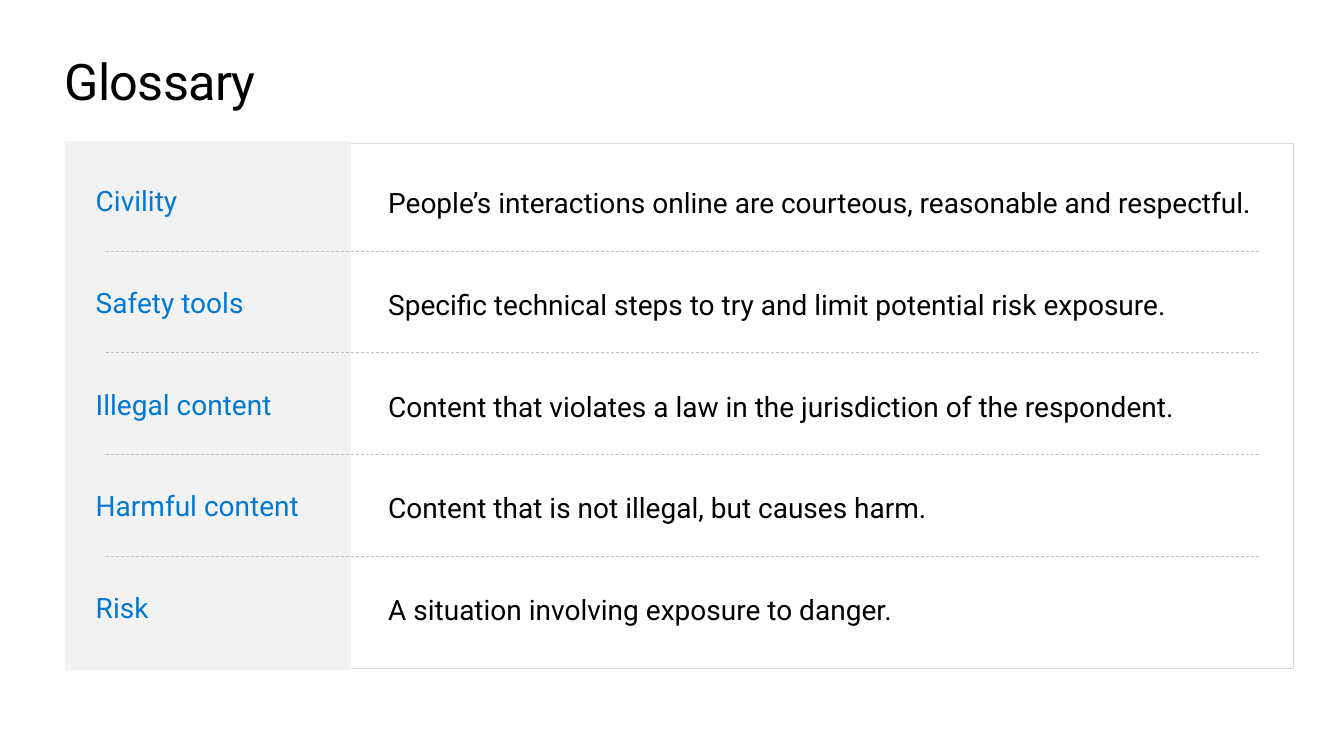
from dataclasses import dataclass

from lxml import etree
from pptx import Presentation
from pptx import util as u
from pptx.dml.color import RGBColor
from pptx.enum import dml, shapes, text
from pptx.oxml.ns import qn


@dataclass(frozen=True)
class Theme:
    font: str = "Roboto"
    title_size: float = 36
    body_size: float = 20
    ink: str = "000000"
    term: str = "0078D4"
    band: str = "F2F2F2"
    border: str = "D9D9D9"
    divider: str = "BFBFBF"


THEME = Theme()
SLIDE_SIZE = (13.33, 7.5)
LEFT, FULL_WIDTH = 0.64, 12.05
TERM_LEFT, TERM_WIDTH = 0.95, 2.34
MEANING_LEFT, MEANING_WIDTH = 3.85, 8.7
DIVIDER_LEFT, DIVIDER_RIGHT = 1.05, 12.49
FIRST_ROW, ROW_STEP, TEXT_HEIGHT = 1.82, 1.01, 0.34
MEANING_DROP, DIVIDER_DROP = 0.02, 0.67

ENTRIES = [
    ("Civility", "People’s interactions online are courteous, reasonable and respectful."),
    ("Safety tools", "Specific technical steps to try and limit potential risk exposure."),
    ("Illegal content", "Content that violates a law in the jurisdiction of the respondent."),
    ("Harmful content", "Content that is not illegal, but causes harm."),
    ("Risk", "A situation involving exposure to danger."),
]


def inches(*lengths):
    return [u.Inches(length) for length in lengths]


def color(value):
    return RGBColor.from_string(value)


def write(box, words, *, size=THEME.body_size, ink=THEME.ink, spacing=None):
    """Fill a box with one line of left-aligned text; spacing is in points."""
    frame = box.text_frame
    frame.word_wrap = True
    frame.auto_size = text.MSO_AUTO_SIZE.SHAPE_TO_FIT_TEXT
    frame.vertical_anchor = text.MSO_ANCHOR.TOP
    frame.margin_left = frame.margin_top = frame.margin_right = frame.margin_bottom = 0
    para = frame.paragraphs[0]
    para.alignment = text.PP_ALIGN.LEFT
    span = para.add_run()
    span.text = words
    span.font.name = THEME.font
    span.font.size = u.Pt(size)
    span.font.color.rgb = color(ink)
    if spacing is not None:
        span.font._element.set("spc", str(round(spacing * 100)))


def add_title(page, words):
    title = page.shapes.title
    title.left, title.top, title.width, title.height = inches(LEFT, 0.5, FULL_WIDTH, 0.61)
    write(title, words, size=THEME.title_size, spacing=-0.5)


def add_panel(page, *place, fill=None, border=None):
    panel = page.shapes.add_shape(shapes.MSO_SHAPE.RECTANGLE, *inches(*place))
    panel.shadow.inherit = False
    if fill:
        panel.fill.solid()
        panel.fill.fore_color.rgb = color(fill)
    else:
        panel.fill.background()
    if border:
        panel.line.color.rgb = color(border)
        panel.line.width = u.Pt(0.75)
    else:
        panel.line.fill.background()


def add_divider(page, top):
    divider = page.shapes.add_connector(
        shapes.MSO_CONNECTOR.STRAIGHT, *inches(DIVIDER_LEFT, top, DIVIDER_RIGHT, top))
    divider.line.color.rgb = color(THEME.divider)
    divider.line.width = u.Pt(0.5)
    divider.line.dash_style = dml.MSO_LINE.DASH
    etree.SubElement(divider._element.spPr, qn("a:effectLst"))


def add_entry(page, top, term, meaning):
    term_box = page.shapes.add_textbox(*inches(TERM_LEFT, top, TERM_WIDTH, TEXT_HEIGHT))
    write(term_box, term, ink=THEME.term)
    meaning_box = page.shapes.add_textbox(
        *inches(MEANING_LEFT, top + MEANING_DROP, MEANING_WIDTH, TEXT_HEIGHT))
    write(meaning_box, meaning)


def main():
    deck = Presentation()
    deck.slide_width, deck.slide_height = inches(*SLIDE_SIZE)
    page = deck.slides.add_slide(deck.slide_layouts.get_by_name("Title Only"))
    add_title(page, "Glossary")
    add_panel(page, 0.78, 1.42, FULL_WIDTH, 5.21, border=THEME.border)
    add_panel(page, LEFT, 1.4, 2.84, 5.25, fill=THEME.band)
    for row, (term, meaning) in enumerate(ENTRIES):
        top = FIRST_ROW + row * ROW_STEP
        if row:
            add_divider(page, top - ROW_STEP + DIVIDER_DROP)
        add_entry(page, top, term, meaning)
    deck.save("out.pptx")


if __name__ == "__main__":
    main()
